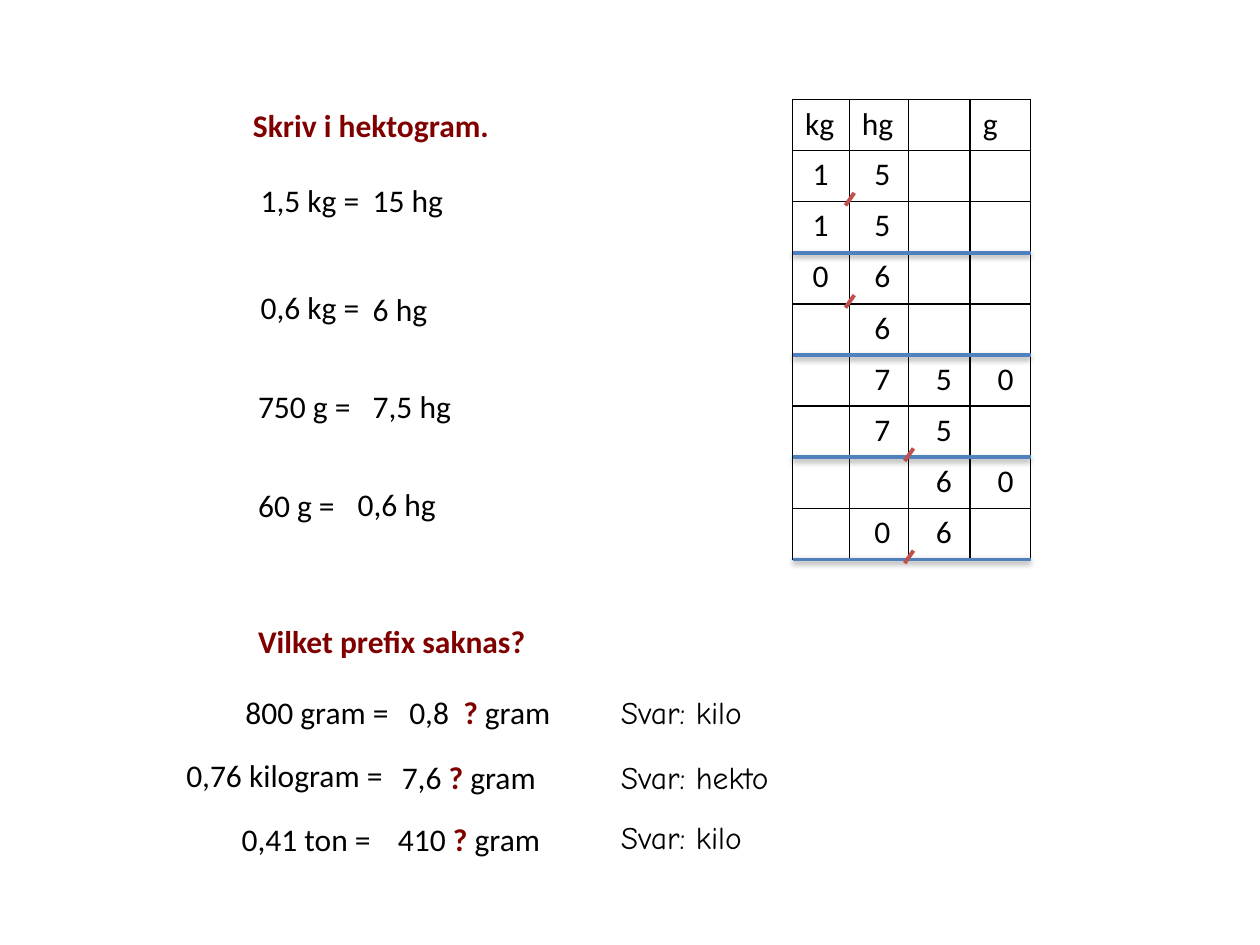
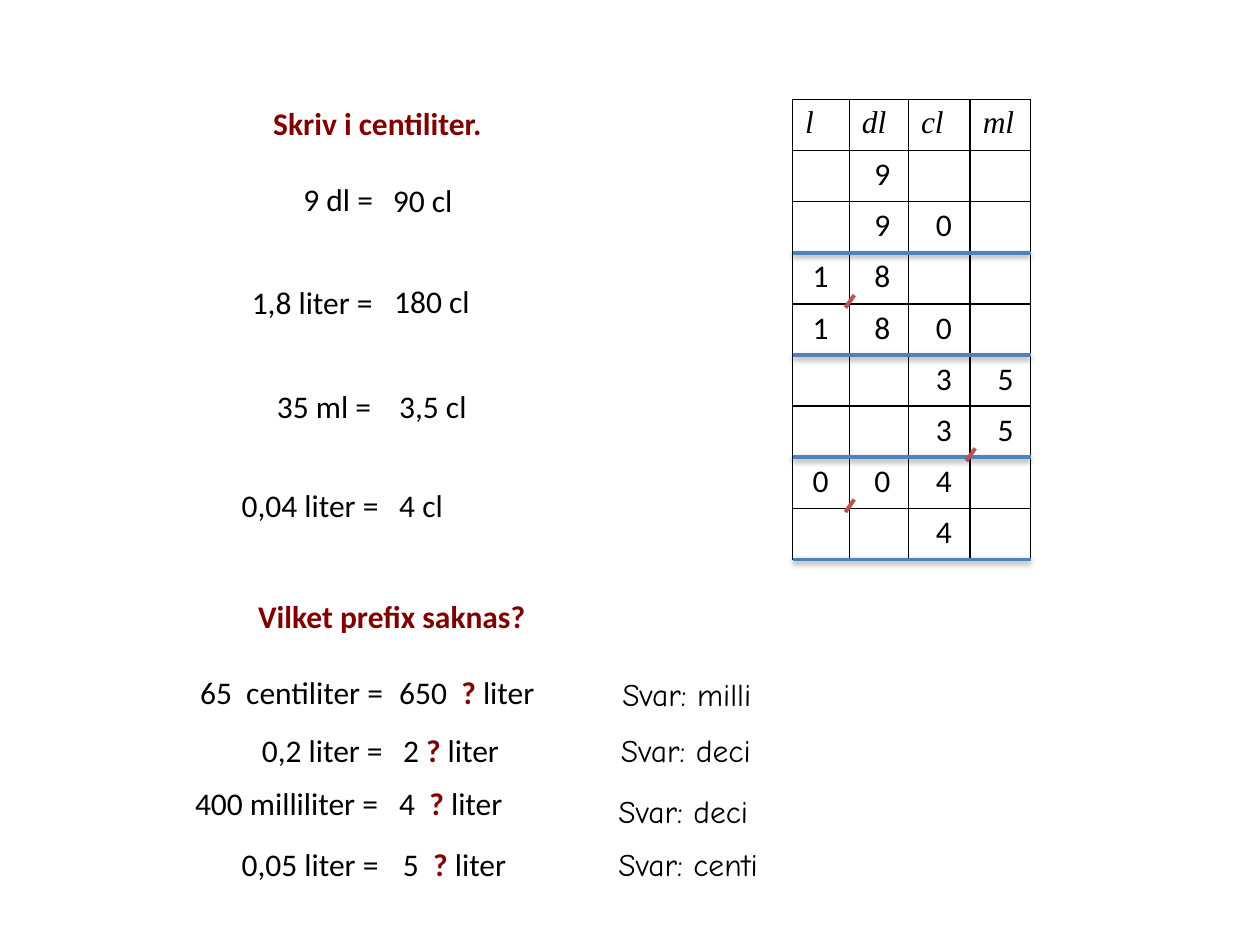
import pptx
import pptx.util
import pptx.dml.color
import pptx.enum.shapes
import pptx.enum.text
import pptx.oxml
import pptx.oxml.ns

Inches, Pt = pptx.util.Inches, pptx.util.Pt
RGBColor = pptx.dml.color.RGBColor

BLACK = RGBColor(0x00, 0x00, 0x00)
WHITE = RGBColor(0xFF, 0xFF, 0xFF)
MAROON = RGBColor(0x80, 0x00, 0x00)
BLUE = RGBColor(0x4F, 0x81, 0xBD)
RED = RGBColor(0xC0, 0x50, 0x4D)
BODY, HAND, SERIF = "Calibri", "Comic Neue", "Times New Roman"
SIZE = Pt(18)
LINE_H = 0.4

# Place value table: column edges and row height
TOP, ROWS = 0.79, 9
ROW_H = 3.65 / ROWS
EDGES = [6.29, 6.74, 7.21, 7.70, 8.18]
DIGIT_X, DIGIT_STEP, DIGIT_W = 6.35, 0.49, 0.29

NS = 'xmlns:a="http://schemas.openxmlformats.org/drawingml/2006/main"'
NO_EFFECT = f"<a:effectLst {NS}/>"
SHADOW = (f'<a:effectLst {NS}><a:outerShdw blurRad="40000" dist="20000" dir="5400000" '
          'rotWithShape="0"><a:srgbClr val="000000"><a:alpha val="38000"/></a:srgbClr>'
          '</a:outerShdw></a:effectLst>')
BORDER = (f'<a:{{side}} {NS} w="12700"><a:solidFill><a:srgbClr val="{BLACK}"/>'
          '</a:solidFill></a:{side}>')

# Each text is (left, top, width, wording). In a digit row, a space skips a
# column and a comma draws the decimal mark at the next column's edge.
SLIDES = [
    {
        "units": ["kg", "hg", "", "g"], "unit_font": BODY, "unit_italic": False,
        "digits": ["1,5", "15", "0,6", " 6", " 750", " 7,5", "  60", " 0,6"],
        "headings": [(1.91, 0.79, 2.10, "Skriv i hektogram."),
                     (1.95, 4.89, 2.75, "Vilket prefix saknas?")],
        "equations": [
            (1.97, 1.39, 0.99, "1,5 kg ="), (2.86, 1.39, 0.77, "15 hg"),
            (1.97, 2.24, 0.99, "0,6 kg ="), (2.86, 2.25, 0.64, "6 hg"),
            (1.95, 3.02, 0.94, "750 g ="), (2.86, 3.02, 0.83, "7,5 hg"),
            (1.95, 3.81, 0.82, "60 g ="), (2.74, 3.80, 0.83, "0,6 hg"),
            (1.85, 5.45, 1.36, "800 gram ="), (3.15, 5.45, 1.34, "0,8  ? gram"),
            (1.38, 5.95, 1.82, "0,76 kilogram ="), (3.09, 5.97, 1.28, "7,6 ? gram"),
            (1.82, 6.46, 1.24, "0,41 ton ="), (3.06, 6.46, 1.35, "410 ? gram"),
        ],
        "answers": [(4.83, 5.45, 1.45, "Svar: kilo"), (4.83, 5.97, 1.45, "Svar: hekto"),
                    (4.83, 6.44, 1.45, "Svar: kilo")],
    },
    {
        "units": ["l", "dl", "cl", "ml"], "unit_font": SERIF, "unit_italic": True,
        "digits": [" 9", " 90", "1,8", "180", "  35", "  3,5", "0,04", "  4"],
        "headings": [(2.07, 0.78, 1.90, "Skriv i centiliter."),
                     (1.95, 4.69, 2.75, "Vilket prefix saknas?")],
        "equations": [
            (2.31, 1.38, 0.76, "9 dl ="), (3.02, 1.39, 0.68, "90 cl"),
            (1.90, 2.20, 1.17, "1,8 liter ="), (3.03, 2.19, 0.81, "180 cl"),
            (2.10, 3.02, 0.96, "35 ml ="), (3.07, 3.02, 0.74, "3,5 cl"),
            (1.82, 3.81, 1.30, "0,04 liter ="), (3.07, 3.81, 0.55, "4 cl"),
            (1.49, 5.29, 1.70, "65  centiliter ="), (3.07, 5.29, 1.30, "650  ? liter"),
            (1.98, 5.75, 1.17, "0,2 liter ="), (3.10, 5.75, 0.98, "2 ? liter"),
            (1.45, 6.17, 1.67, "400 milliliter ="), (3.07, 6.17, 1.03, "4  ? liter"),
            (1.82, 6.66, 1.30, "0,05 liter ="), (3.10, 6.66, 1.03, "5  ? liter"),
        ],
        "answers": [(4.84, 5.31, 1.45, "Svar: milli"), (4.83, 5.75, 1.45, "Svar: deci"),
                    (4.81, 6.24, 1.45, "Svar: deci"), (4.81, 6.66, 1.45, "Svar: centi")],
    },
]


def add_text(s, x, y, w, runs, font=BODY, wrap=True):
    """Add a one-line text box; runs are (wording, highlighted) pairs."""
    tf = s.shapes.add_textbox(Inches(x), Inches(y), Inches(w), Inches(LINE_H)).text_frame
    tf.word_wrap = wrap
    tf.auto_size = pptx.enum.text.MSO_AUTO_SIZE.SHAPE_TO_FIT_TEXT
    for wording, highlighted in runs:
        r = tf.paragraphs[0].add_run()
        r.text = wording
        r.font.name, r.font.size, r.font.bold = font, SIZE, highlighted
        r.font.color.rgb = MAROON if highlighted else BLACK


def add_line(s, x1, y1, x2, y2, color, width, effect):
    line = s.shapes.add_connector(pptx.enum.shapes.MSO_CONNECTOR.STRAIGHT,
                                  Inches(x1), Inches(y1), Inches(x2), Inches(y2))
    line.line.color.rgb = color
    line.line.width = Pt(width)
    line._element.spPr.append(pptx.oxml.parse_xml(effect))


prs = pptx.Presentation()
prs.slide_width, prs.slide_height = Inches(10), Inches(7.5)

for content in SLIDES:
    s = prs.slides.add_slide(prs.slide_layouts[6])

    # Empty place value table with its units
    table = s.shapes.add_table(ROWS, len(EDGES) - 1, Inches(EDGES[0]), Inches(TOP),
                               Inches(EDGES[-1] - EDGES[0]), Inches(ROWS * ROW_H)).table
    table.first_row = table.horz_banding = False
    for column, left, right in zip(table.columns, EDGES, EDGES[1:]):
        column.width = Inches(right - left)
    for row in table.rows:
        row.height = Inches(ROW_H)
    for cell in table.iter_cells():
        tcPr = cell._tc.get_or_add_tcPr()
        for side in ("lnL", "lnR", "lnT", "lnB"):
            tcPr.append(pptx.oxml.parse_xml(BORDER.format(side=side)))
        cell.fill.solid()
        cell.fill.fore_color.rgb = WHITE
    for i, unit in enumerate(content["units"]):
        if unit:
            r = table.cell(0, i).text_frame.paragraphs[0].add_run()
            r.text = unit
            r.font.name, r.font.size = content["unit_font"], SIZE
            r.font.italic = content["unit_italic"]
            r.font.color.rgb = BLACK

    # A blue rule closes every pair of digit rows
    for row in range(3, ROWS + 1, 2):
        y = TOP + row * ROW_H
        add_line(s, EDGES[0], y, EDGES[-1], y, BLUE, 2, SHADOW)

    for row, digits in enumerate(content["digits"], start=1):
        column = 0
        for mark in digits:
            if mark == ",":
                x, y = EDGES[column], TOP + (row + 1) * ROW_H - 0.02
                add_line(s, x + 0.04, y - 0.05, x - 0.03, y + 0.05, RED, 2.25, NO_EFFECT)
                continue
            if mark != " ":
                add_text(s, DIGIT_X + column * DIGIT_STEP, TOP + row * ROW_H - 0.02,
                         DIGIT_W, [(mark, False)])
            column += 1

    for x, y, w, wording in content["headings"]:
        add_text(s, x, y, w, [(wording, True)], wrap=False if y < 1 else True)
    for x, y, w, wording in content["equations"]:
        before, gap, after = wording.partition("?")
        runs = [(before, False), (gap, True), (after, False)] if gap else [(before, False)]
        add_text(s, x, y, w, runs, wrap=False)
    for x, y, w, wording in content["answers"]:
        add_text(s, x, y, w, [(wording, False)], font=HAND)

prs.save("out.pptx")
